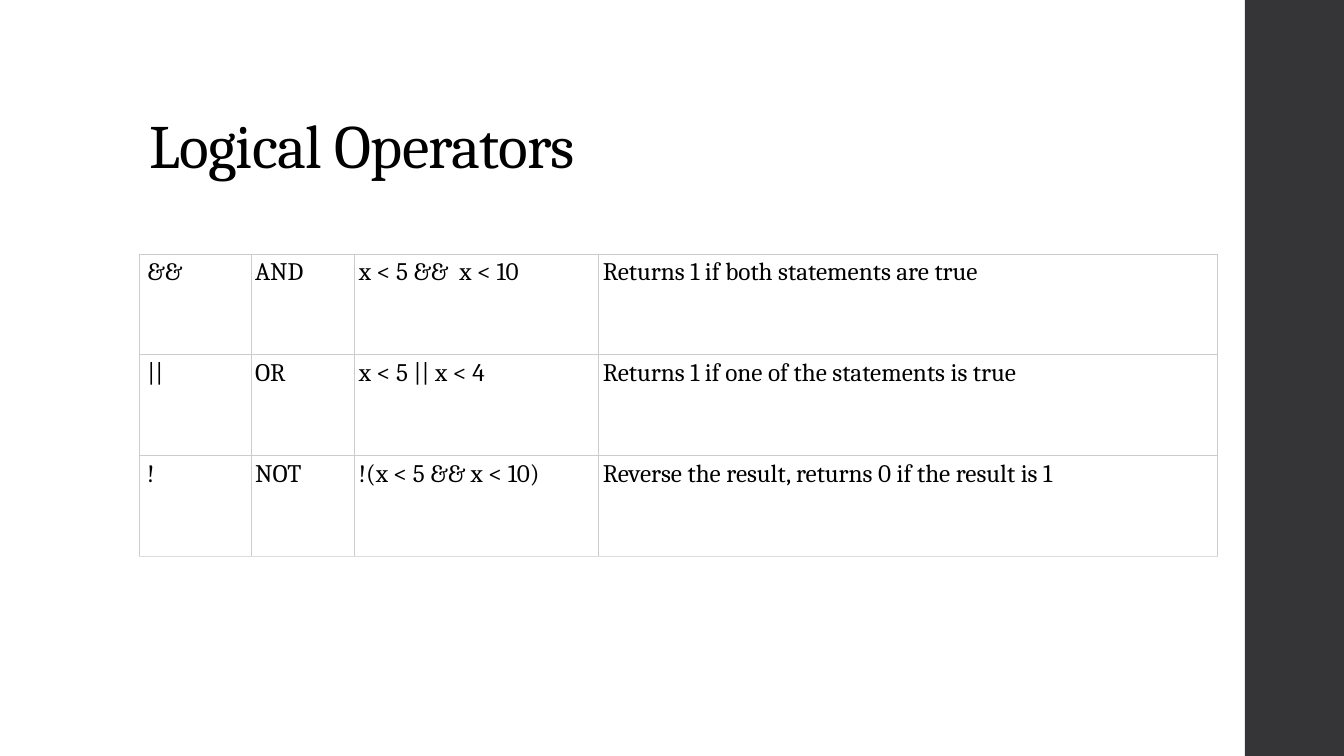
import pptx
import pptx.dml.color
import pptx.enum.shapes
import pptx.enum.text
import pptx.oxml
import pptx.oxml.ns
import pptx.util

Pt = pptx.util.Pt

FONT = "Cambria"
BLACK, WHITE = "000000", "FFFFFF"
SIDEBAR_COLOR = "353537"
BORDER_COLOR, BOTTOM_BORDER_COLOR = "CCCCCC", "DDDDDD"

COLUMN_WIDTHS = [79.92, 74.16, 174.24, 442.08]
ROW_HEIGHT = 72
OPERATORS = [
    ("&& ", "AND", "x < 5 &&  x < 10", "Returns 1 if both statements are true"),
    ("|| ", "OR", "x < 5 || x < 4", "Returns 1 if one of the statements is true"),
    ("!", "NOT", "!(x < 5 && x < 10)",
     "Reverse the result, returns 0 if the result is 1"),
]


def color(value):
    return pptx.dml.color.RGBColor.from_string(value)


def fill_solid(target, value):
    target.fill.solid()
    target.fill.fore_color.rgb = color(value)


def set_text(text_frame, text, size):
    text_frame.text = text
    run = text_frame.paragraphs[0].runs[0]
    run.font.name = FONT
    run.font.size = Pt(size)
    run.font.color.rgb = color(BLACK)
    return run


def add_sidebar(slide):
    sidebar = slide.shapes.add_shape(
        pptx.enum.shapes.MSO_SHAPE.RECTANGLE, Pt(889.2), Pt(0), Pt(72), Pt(540))
    sidebar.shadow.inherit = False
    fill_solid(sidebar, SIDEBAR_COLOR)
    sidebar.line.fill.background()


def format_title(title, text):
    title.left, title.top = Pt(99.36), Pt(28.8)
    title.width, title.height = Pt(763.2), Pt(104.4)
    title.text_frame.vertical_anchor = pptx.enum.text.MSO_ANCHOR.BOTTOM
    run = set_text(title.text_frame, text, 44)
    run.font._element.set("spc", "-50")
    paragraph = title.text_frame.paragraphs[0]
    paragraph.alignment = pptx.enum.text.PP_ALIGN.LEFT
    paragraph.line_spacing = 0.9


def set_borders(cell, bottom_color):
    """Draw all four cell edges; call before filling, as the XML order requires."""
    properties = cell._tc.get_or_add_tcPr()
    for side in "LRTB":
        value = bottom_color if side == "B" else BORDER_COLOR
        properties.append(pptx.oxml.parse_xml(
            f'<a:ln{side} {pptx.oxml.ns.nsdecls("a")} w="{Pt(0.75)}">'
            f'<a:solidFill><a:srgbClr val="{value}"/></a:solidFill></a:ln{side}>'))


def format_cell(cell, text, left_margin, bottom_color):
    set_text(cell.text_frame, text, 18)
    cell.margin_left = Pt(left_margin)
    cell.margin_right = cell.margin_top = cell.margin_bottom = Pt(3)
    set_borders(cell, bottom_color)
    fill_solid(cell, WHITE)


def add_operator_table(slide):
    last_row = len(OPERATORS) - 1
    table = slide.shapes.add_table(
        len(OPERATORS), len(COLUMN_WIDTHS), Pt(99.36), Pt(181.44),
        Pt(sum(COLUMN_WIDTHS)), Pt(ROW_HEIGHT * len(OPERATORS))).table
    table.first_row = table.horz_banding = False
    for column, width in zip(table.columns, COLUMN_WIDTHS):
        column.width = Pt(width)
    for row_index, texts in enumerate(OPERATORS):
        table.rows[row_index].height = Pt(ROW_HEIGHT)
        bottom_color = BOTTOM_BORDER_COLOR if row_index == last_row else BORDER_COLOR
        for column_index, text in enumerate(texts):
            left_margin = 6 if column_index == 0 else 3
            format_cell(table.cell(row_index, column_index), text,
                        left_margin, bottom_color)


def main():
    presentation = pptx.Presentation()
    presentation.slide_width, presentation.slide_height = Pt(960), Pt(540)
    slide = presentation.slides.add_slide(presentation.slide_layouts[5])
    fill_solid(slide.background, WHITE)
    add_sidebar(slide)
    format_title(slide.shapes.title, "Logical Operators")
    add_operator_table(slide)
    presentation.save("out.pptx")


if __name__ == "__main__":
    main()
